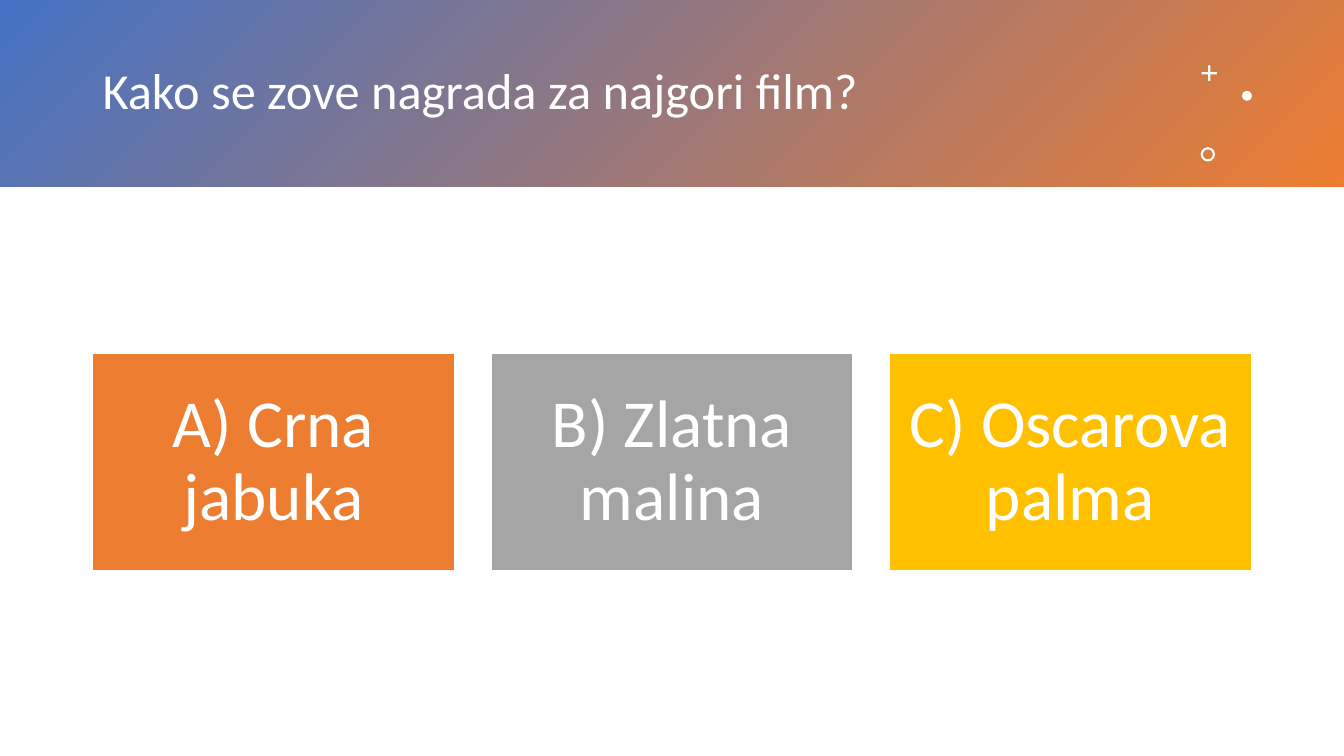
from pptx import Presentation
from pptx.dml.color import RGBColor
from pptx.enum import shapes, text
from pptx.util import Cm, Pt

BLUE = RGBColor(0x44, 0x72, 0xC4)
ORANGE = RGBColor(0xED, 0x7D, 0x31)
GREY = RGBColor(0xA5, 0xA5, 0xA5)
GOLD = RGBColor(0xFF, 0xC0, 0x00)
WHITE = RGBColor(0xFF, 0xFF, 0xFF)
FONT = "Calibri"
SHAPE = shapes.MSO_SHAPE

QUESTION = "Kako se zove nagrada za najgori film?"
ANSWERS = [
    ("A) Crna jabuka", ORANGE),
    ("B) Zlatna malina", GREY),
    ("C) Oscarova palma", GOLD),
]


def add_shape(s, kind, x, y, w, h, color=None):
    sp = s.shapes.add_shape(kind, Cm(x), Cm(y), Cm(w), Cm(h))
    sp.shadow.inherit = False
    sp.line.fill.background()
    if color is not None:
        sp.fill.solid()
        sp.fill.fore_color.rgb = color
    return sp


def write(sp, words, size, align):
    tf = sp.text_frame
    tf.word_wrap = True
    tf.auto_size = text.MSO_AUTO_SIZE.NONE
    tf.vertical_anchor = text.MSO_ANCHOR.MIDDLE
    tf.text = words
    p = tf.paragraphs[0]
    p.alignment = align
    p.line_spacing = 0.9
    f = p.runs[0].font
    f.name, f.size, f.color.rgb = FONT, Pt(size), WHITE


def add_header(s, x, y, w, h):
    # Gradient band behind the title
    band = add_shape(s, SHAPE.RECTANGLE, x, y, w, h)
    band.fill.gradient()
    band.fill.gradient_angle = 315
    for stop, color, pos in zip(band.fill.gradient_stops, (BLUE, ORANGE), (0, 1)):
        stop.color.rgb = color
        stop.position = pos

    # Question
    title = s.shapes.title
    title.element.addprevious(band.element)
    title.left, title.top = Cm(x + 2.33), Cm(y + 0.84)
    title.width, title.height = Cm(27.31), Cm(3.02)
    write(title, QUESTION, 36, text.PP_ALIGN.LEFT)

    # Small marks at the right: plus, dot and ring
    right = x + w
    marks = [
        (SHAPE.CROSS, 3.59, 1.65, 0.39, 0.43),
        (SHAPE.OVAL, 2.57, 2.29, 0.25, None),
        (SHAPE.DONUT, 3.61, 3.71, 0.36, 0.15),
    ]
    for kind, inset, top, size, adj in marks:
        mark = add_shape(s, kind, right - inset, y + top, size, size, WHITE)
        if adj is not None:
            mark.adjustments[0] = adj


def add_answers(s, x, y, w, h, gap):
    card_w = (w - gap * (len(ANSWERS) - 1)) / len(ANSWERS)
    for i, (words, color) in enumerate(ANSWERS):
        card = add_shape(s, SHAPE.RECTANGLE, x + i * (card_w + gap), y, card_w, h, color)
        card.line.color.rgb = WHITE
        card.line.width = Pt(1)
        tf = card.text_frame
        tf.margin_left = tf.margin_right = tf.margin_top = tf.margin_bottom = Cm(0.5)
        write(card, words, 48, text.PP_ALIGN.CENTER)


def main():
    prs = Presentation()
    prs.slide_width, prs.slide_height = Cm(33.87), Cm(19.05)
    s = prs.slides.add_slide(prs.slide_layouts[5])
    add_header(s, 0, 0, 33.87, 4.7)
    add_answers(s, 2.33, 8.91, 29.21, 5.48, 0.91)
    prs.save("out.pptx")


if __name__ == "__main__":
    main()
